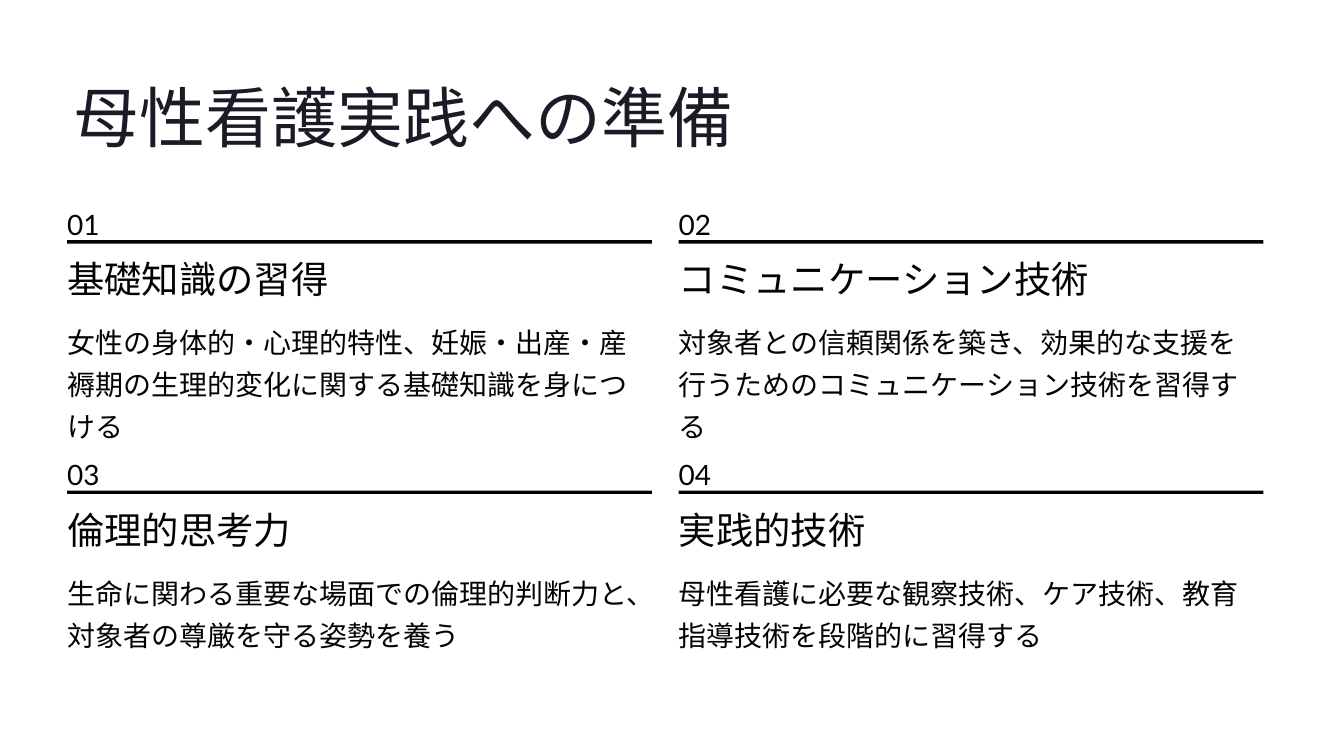
"""Build a slide with four numbered preparation steps in a two-by-two grid."""
import pptx
import pptx.dml.color
import pptx.enum.shapes
import pptx.enum.text
import pptx.util

INK = "030303"
TITLE_INK = "1B1B27"
LEFT, TOP = 0.8, 2.37
COLUMN_WIDTH, COLUMN_STEP, ROW_STEP = 6.96, 7.28, 2.98
STEPS = [
    ("基礎知識の習得", 3.94,
     "女性の身体的・心理的特性、妊娠・出産・産褥期の生理的変化に関する基礎知識を身につける"),
    ("コミュニケーション技術", 4.32,
     "対象者との信頼関係を築き、効果的な支援を行うためのコミュニケーション技術を習得する"),
    ("倫理的思考力", 3.94,
     "生命に関わる重要な場面での倫理的判断力と、対象者の尊厳を守る姿勢を養う"),
    ("実践的技術", 3.94,
     "母性看護に必要な観察技術、ケア技術、教育指導技術を段階的に習得する"),
]


def color(value):
    return pptx.dml.color.RGBColor.from_string(value)


def write(shape, box, text, font, size, spacing, ink=INK, wrap=False):
    shape.left, shape.top, shape.width, shape.height = map(pptx.util.Inches, box)
    frame = shape.text_frame
    frame.margin_left = frame.margin_top = frame.margin_right = frame.margin_bottom = 0
    frame.auto_size = pptx.enum.text.MSO_AUTO_SIZE.NONE
    frame.vertical_anchor = pptx.enum.text.MSO_ANCHOR.TOP
    frame.word_wrap = wrap
    paragraph = frame.paragraphs[0]
    paragraph.alignment = pptx.enum.text.PP_ALIGN.LEFT
    paragraph.line_spacing = pptx.util.Pt(spacing)
    paragraph.space_before = pptx.util.Pt(0)
    run = paragraph.add_run()
    run.text = text
    run.font.name = font
    run.font.size = pptx.util.Pt(size)
    run.font.color.rgb = color(ink)


presentation = pptx.Presentation()
presentation.slide_width = pptx.util.Inches(16)
presentation.slide_height = pptx.util.Inches(9)
slide = presentation.slides.add_slide(presentation.slide_layouts[5])
shapes = slide.shapes

write(shapes.title, (0.88, 0.88, 7.87, 0.98), "母性看護実践への準備", "Inter", 56.5, 70.5, TITLE_INK)

for index, (heading, heading_width, description) in enumerate(STEPS):
    row, column = divmod(index, 2)
    left = LEFT + column * COLUMN_STEP
    top = TOP + row * ROW_STEP

    number_box = shapes.add_textbox(0, 0, 0, 0)
    write(number_box, (left, top, 0.31, 0.39), f"{index + 1:02}", "Lato", 24, 36)

    rule = shapes.add_shape(
        pptx.enum.shapes.MSO_SHAPE.RECTANGLE,
        *map(pptx.util.Inches, (left, top + 0.49, COLUMN_WIDTH, 0.04)))
    rule.shadow.inherit = False
    rule.fill.solid()
    rule.fill.fore_color.rgb = color(INK)
    rule.line.fill.background()

    heading_box = shapes.add_textbox(0, 0, 0, 0)
    write(heading_box, (left, top + 0.73, heading_width, 0.49), heading, "Inter", 32, 35)

    description_box = shapes.add_textbox(0, 0, 0, 0)
    write(description_box, (left, top + 1.41, COLUMN_WIDTH, 1.01), description, "Cabin", 24, 36, wrap=True)

presentation.save("out.pptx")
